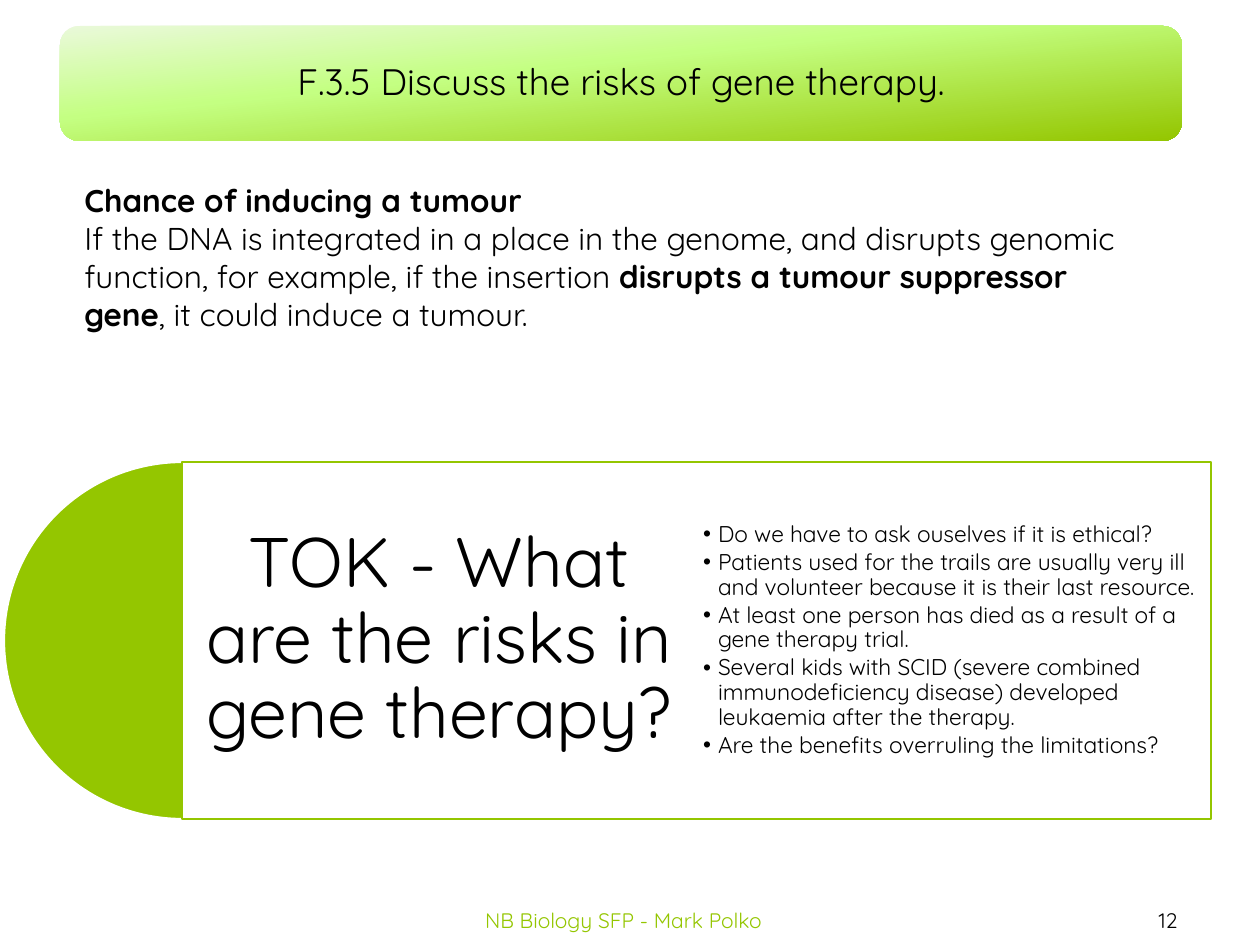
from copy import deepcopy

from lxml import etree
from pptx import Presentation
from pptx import util as u
from pptx.dml.color import RGBColor
from pptx.enum import shapes, text
from pptx.oxml.ns import qn

PX = 914400 / 126
FONT = "Quicksand"
BLACK = RGBColor(0x00, 0x00, 0x00)
WHITE = RGBColor(0xFF, 0xFF, 0xFF)
GREEN = RGBColor(0x94, 0xC6, 0x00)
LIME = RGBColor(0xC4, 0xFF, 0x82)
PALE = RGBColor(0xEA, 0xF9, 0xDA)

CENTER = text.PP_ALIGN.CENTER
LEFT = text.PP_ALIGN.LEFT
MIDDLE = text.MSO_ANCHOR.MIDDLE
TOP = text.MSO_ANCHOR.TOP

RISKS = [
    "Do we have to ask ouselves if it is ethical?",
    "Patients used for the trails are usually very ill and volunteer "
    "because it is their last resource.",
    "At least one person has died as a result of a gene therapy trial.",
    "Several kids with SCID (severe combined immunodeficiency disease) "
    "developed leukaemia after the therapy.",
    "Are the benefits overruling the limitations?",
]


def px(length):
    return u.Emu(round(length * PX))


class SlideBuilder:
    def __init__(self, page):
        self.page = page

    def shape(self, kind, area, fill=None, line=None):
        shape = self.page.shapes.add_shape(kind, *map(px, area))
        shape.shadow.inherit = False
        if fill is not None:
            shape.fill.solid()
            shape.fill.fore_color.rgb = fill
        if line is None:
            shape.line.fill.background()
        else:
            shape.line.color.rgb = line
            shape.line.width = u.Pt(1.25)
        return shape

    def gradient(self, shape, stops, angle):
        """Fill with (percent, colour) stops; the angle runs clockwise."""
        shape.fill.gradient()
        shape.fill.gradient_angle = 360 - angle
        first = shape.fill.gradient_stops[0]
        stop_list = shape.element.spPr.find(".//" + qn("a:gsLst"))
        for _ in range(len(stops) - len(shape.fill.gradient_stops)):
            stop_list.append(deepcopy(stop_list[0]))
        for stop, (percent, color) in zip(shape.fill.gradient_stops, stops):
            stop.position = percent / 100
            stop.color.rgb = color

    def opacity(self, shape, percent):
        color = shape.element.spPr.find(qn("a:solidFill"))[0]
        etree.SubElement(color, qn("a:alpha")).set("val", str(percent * 1000))

    def text(self, area, paragraphs, size, **style):
        box = self.page.shapes.add_textbox(*map(px, area))
        self.format(box, paragraphs, size, **style)

    def placeholder(self, holder, area, paragraphs, size, **style):
        """Place a template placeholder in front of what is drawn so far."""
        holder.left, holder.top, holder.width, holder.height = map(px, area)
        holder.element.getparent().append(holder.element)
        self.format(holder, paragraphs, size, **style)

    def format(self, box, paragraphs, size, color=BLACK, align=CENTER,
               anchor=MIDDLE, inset=None, spacing=1.0, after=0, hanging=0):
        """Write paragraphs, each a list of (wording, bold) spans."""
        frame = box.text_frame
        frame.word_wrap = True
        frame.auto_size = text.MSO_AUTO_SIZE.NONE
        frame.vertical_anchor = anchor
        if inset is not None:
            frame.margin_left = frame.margin_right = px(inset)
            frame.margin_top = frame.margin_bottom = px(inset)
        frame.text = "\n".join("" for _ in paragraphs)
        for para, spans in zip(frame.paragraphs, paragraphs):
            para.alignment = align
            para.line_spacing = spacing
            para.space_before = u.Pt(0)
            para.space_after = u.Pt(after)
            if hanging:
                properties = para._p.get_or_add_pPr()
                properties.set("marL", str(px(hanging)))
                properties.set("indent", str(-px(hanging)))
            for wording, bold in spans:
                span = para.add_run()
                span.text = wording
                span.font.name = FONT
                span.font.size = u.Pt(size)
                span.font.bold = bold
                span.font.color.rgb = color


def main():
    deck = Presentation()
    deck.slide_width, deck.slide_height = px(1260), px(945)
    page = deck.slides.add_slide(deck.slide_layouts[1])
    title, risk_list = page.placeholders
    build = SlideBuilder(page)
    kinds = shapes.MSO_SHAPE

    banner = build.shape(kinds.ROUNDED_RECTANGLE, (60, 26, 1122, 115))
    build.gradient(banner, [(0, PALE), (40, LIME), (100, GREEN)], 84)
    build.placeholder(title, (66, 31, 1110, 105),
                      [[("F.3.5 Discuss the risks of gene therapy.", False)]],
                      21, inset=11, spacing=0.9)

    build.text((72, 175, 1097, 165), [
        [("Chance of inducing a tumour", True)],
        [("If the DNA is integrated in a place in the genome, and disrupts "
          "genomic function, for example, if the insertion ", False),
         ("disrupts a tumour suppressor gene", True),
         (", it could induce a tumour.", False)],
    ], 18, align=LEFT, anchor=TOP)

    half_disc = build.shape(kinds.PIE, (4, 462, 357, 357), GREEN, WHITE)
    half_disc.adjustments[0] = 54
    half_disc.adjustments[1] = 162
    panel = build.shape(kinds.RECTANGLE, (182, 462, 1029, 357), WHITE, GREEN)
    build.opacity(panel, 90)
    build.text((182, 462, 514, 357),
               [[("TOK - What are the risks in gene therapy?", False)]],
               40, inset=21, spacing=0.9)
    build.placeholder(risk_list, (697, 462, 514, 357),
                      [[(risk, False)] for risk in RISKS], 13, align=LEFT,
                      inset=6, spacing=0.9, after=2, hanging=15)

    build.text((382, 895, 483, 50), [[("NB Biology SFP - Mark Polko", False)]],
               12, color=GREEN)
    build.text((1076, 895, 184, 50), [[("12", False)]], 12)

    deck.save("out.pptx")


if __name__ == "__main__":
    main()
